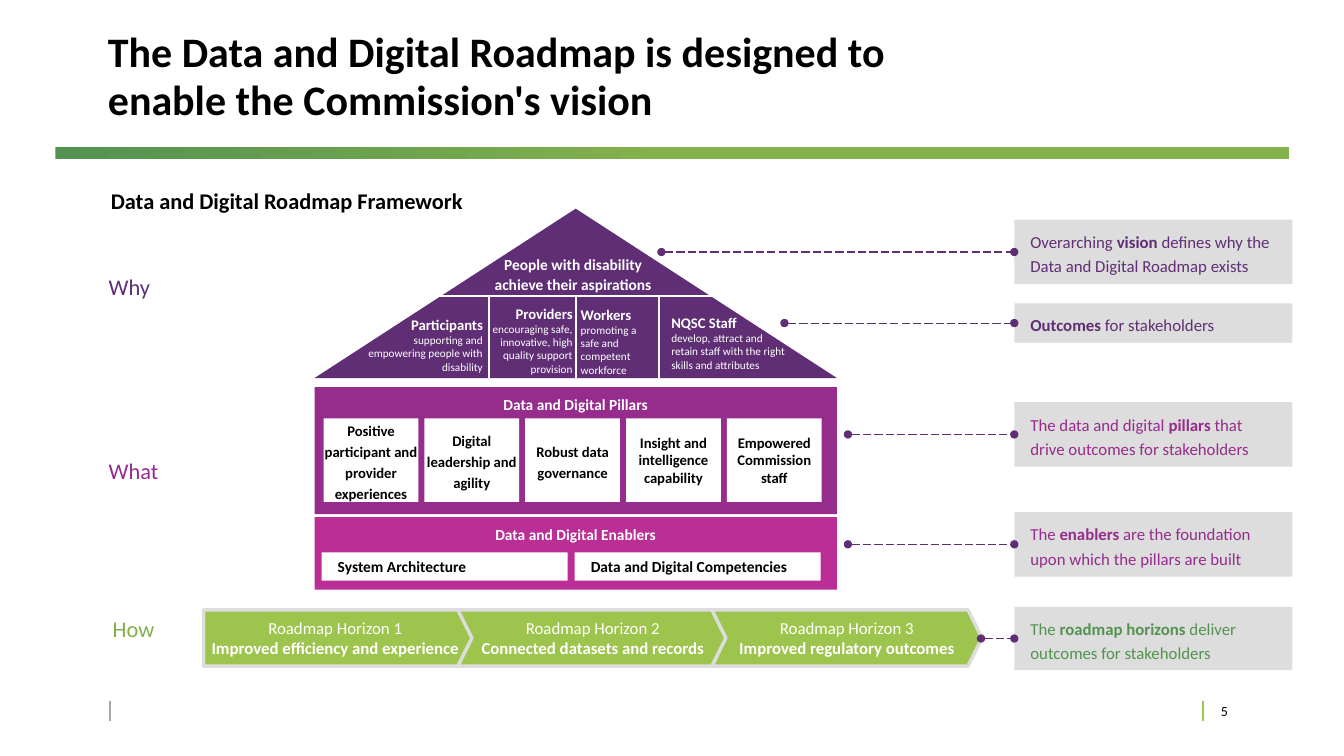
import dataclasses

import lxml.etree
import pptx
import pptx.dml.color
import pptx.enum.dml
import pptx.enum.shapes
import pptx.enum.text
import pptx.oxml.ns
import pptx.util

SHAPE = pptx.enum.shapes.MSO_SHAPE
ALIGN = pptx.enum.text.PP_ALIGN
ANCHOR = pptx.enum.text.MSO_ANCHOR


@dataclasses.dataclass(frozen=True)
class Theme:
    """Colours, type sizes and font of the slide."""
    font: str = "Calibri"
    black: str = "000000"
    white: str = "FFFFFF"
    grey: str = "DDDDDD"
    rule: str = "A6A6A6"
    purple: str = "5F2E74"
    plum: str = "962C8B"
    pink: str = "BA2E96"
    forest: str = "539250"
    leaf: str = "83B14C"
    lime: str = "9DC44D"
    title: float = 30
    head: float = 16
    note: float = 12
    label: float = 11
    item: float = 10.5
    page: float = 10
    small: float = 8


T = Theme()


def grid(count):
    """Turn a count of columns or rows, ten to the inch, into a length."""
    return pptx.util.Inches(count / 10)


def rgb(code):
    """Turn a hex code into a colour."""
    return pptx.dml.color.RGBColor.from_string(code)


def inside(box, left, top, wide, high):
    """Place a box relative to the corner of another."""
    return box[0] + left, box[1] + top, wide, high


def write(frame, text, size=T.label, color=T.black, bold=False,
          align=ALIGN.LEFT, lead=1.0):
    """Add a paragraph, with bold switched at each asterisk."""
    para = frame.paragraphs[0] if not frame.text else frame.add_paragraph()
    para.alignment, para.line_spacing = align, lead
    for turn, part in enumerate(text.split("*")):
        if part:
            run = para.add_run()
            run.text = part
            run.font.name, run.font.size = T.font, pptx.util.Pt(size)
            run.font.color.rgb = rgb(color)
            run.font.bold = bold or turn % 2 == 1


def setup(frame, pad=(1, 0.5, 1, 0.5), anchor=ANCHOR.TOP):
    """Wrap a text frame and set its margins and anchor."""
    frame.word_wrap, frame.vertical_anchor = True, anchor
    (frame.margin_left, frame.margin_top,
     frame.margin_right, frame.margin_bottom) = map(grid, pad)
    return frame


def area(slide, box, **kind):
    """Add a text box and return its frame."""
    return setup(slide.shapes.add_textbox(*map(grid, box)).text_frame, **kind)


def block(slide, box, fill, form=SHAPE.RECTANGLE, edge=None, **kind):
    """Add a filled shape and return it."""
    shape = slide.shapes.add_shape(form, *map(grid, box))
    shape.shadow.inherit = False
    shape.fill.solid()
    shape.fill.fore_color.rgb = rgb(fill)
    if edge:
        shape.line.color.rgb = rgb(edge)
        shape.line.width = pptx.util.Pt(2.5)
    else:
        shape.line.fill.background()
    setup(shape.text_frame, **kind)
    return shape


def stroke(slide, ends, color, width, dots=False):
    """Draw a straight line, dashed with round ends if asked."""
    line = slide.shapes.add_connector(
        pptx.enum.shapes.MSO_CONNECTOR.STRAIGHT, *map(grid, ends))
    line.line.color.rgb = rgb(color)
    line.line.width = pptx.util.Pt(width)
    props = line.element.spPr
    if dots:
        line.line.dash_style = pptx.enum.dml.MSO_LINE.LONG_DASH
        for end in ("a:headEnd", "a:tailEnd"):
            lxml.etree.SubElement(props.find(pptx.oxml.ns.qn("a:ln")),
                                  pptx.oxml.ns.qn(end), type="oval")
    lxml.etree.SubElement(props, pptx.oxml.ns.qn("a:effectLst"))


def header(slide, box):
    """Set the title above the gradient band."""
    title = slide.shapes.title
    title.left, title.top, title.width, title.height = map(
        grid, inside(box, 5.2, 0, 78.2, 15.1))
    frame = setup(title.text_frame, (0, 0, 0, 0), ANCHOR.MIDDLE)
    frame.auto_size = pptx.enum.text.MSO_AUTO_SIZE.NONE
    write(frame, "The Data and Digital Roadmap is designed to enable "
          "the Commission's vision", size=T.title, bold=True,
          lead=pptx.util.Pt(34))
    band = block(slide, inside(box, 0, 14.6, box[2], 1.2), T.leaf)
    band.fill.gradient()
    band.fill.gradient_angle = 0
    for stop, color, place in zip(band.fill.gradient_stops,
                                  (T.forest, T.leaf), (0, 0.5)):
        stop.color.rgb, stop.position = rgb(color), place


def footer(slide, box):
    """Draw the footer ticks and the page number."""
    left, top, wide, high = box
    for x, color in ((left, T.rule), (left + wide, T.lime)):
        stroke(slide, (x, top, x, top + high), color, 1)
    write(area(slide, inside(box, wide + 1.8, 0, 4, high), pad=(0, 0, 0, 0),
               anchor=ANCHOR.MIDDLE), "5", size=T.page)


def side(slide, box):
    """Write the heading and the three row labels."""
    write(area(slide, inside(box, 0, 0, 39.6, 4.3), pad=(1.6, 0.8, 1.6, 0.8)),
          "Data and Digital Roadmap Framework", size=T.head, bold=True)
    for text, color, x, y in (("Why", T.purple, 0.4, 8.8),
                              ("What", T.plum, 0.4, 27.1),
                              ("How", T.leaf, 0.8, 42.7)):
        write(area(slide, inside(box, x, y, 8, 3.7)), text,
              size=T.head, color=color)


def roof(slide, box):
    """Draw the triangle with the vision and the four outcomes."""
    left, top, wide, high = box
    block(slide, box, T.purple, SHAPE.ISOSCELES_TRIANGLE)
    beam = top + 8.7
    stroke(slide, (left + 10.9, beam, left + 41.5, beam), T.white, 1.5)
    for x in (17.3, 25.9, 34.2):
        stroke(slide, (left + x, beam, left + x, top + high), T.white, 1.5)
    write(area(slide, inside(box, 15.8, 3.5, 19.7, 5.8), anchor=ANCHOR.MIDDLE),
          "People with disability achieve their aspirations",
          color=T.white, bold=True, align=ALIGN.CENTER, lead=1.1)
    groups = (
        ("Participants", "supporting and empowering people with disability",
         3.5, 10.1, 13.6, 0.4, ALIGN.RIGHT),
        ("Providers", "encouraging safe, innovative, high quality support "
         "provision", 16.9, 9, 9.1, 0.4, ALIGN.RIGHT),
        ("Workers", "promoting a safe and competent workforce",
         26, 9.1, 8.4, 0.4, ALIGN.LEFT),
        ("NQSC Staff", "develop, attract and retain staff with the right "
         "skills and attributes", 34.4, 9.9, 13.8, 1, ALIGN.LEFT))
    for name, text, x, y, span, pad, align in groups:
        frame = area(slide, inside(box, x, y, span, 5.8),
                     pad=(pad, 0.5, pad, 0.5))
        write(frame, name, size=T.item, color=T.white, bold=True, align=align)
        write(frame, text, size=T.small, color=T.white, align=align)


def panel(slide, box, fill, name):
    """Draw a coloured floor of the house with its heading."""
    floor = block(slide, box, fill, pad=(0.5, 0.8, 0.5, 0.5))
    write(floor.text_frame, name, color=T.white, bold=True,
          align=ALIGN.CENTER)


def pillars(slide, box):
    """Draw the floor of five pillars."""
    panel(slide, box, T.plum, "Data and Digital Pillars")
    names = (("Positive participant and provider experiences", 1.2),
             ("Digital leadership and agility", 1.2),
             ("Robust data governance", 1.2),
             ("Insight and intelligence capability", 1),
             ("Empowered Commission staff", 1))
    for step, (name, lead) in enumerate(names):
        card = block(slide, inside(box, 0.9 + 10 * step, 3.1, 9.4, 8.3),
                     T.white, pad=(0, 0.5, 0, 0.5), anchor=ANCHOR.MIDDLE)
        write(card.text_frame, name, size=T.item, bold=True,
              align=ALIGN.CENTER, lead=lead)


def bases(slide, box):
    """Draw the floor of two enablers."""
    panel(slide, box, T.pink, "Data and Digital Enablers")
    names = "System Architecture", "Data and Digital Competencies"
    for step, name in enumerate(names):
        card = block(slide, inside(box, 0.7 + 25.1 * step, 3.5, 24.4, 2.8),
                     T.white, pad=(1.6, 0.5, 1.6, 0.5))
        write(card.text_frame, name, bold=True)


def steps(slide, box):
    """Draw the three horizons as a row of arrows."""
    names = ("Improved efficiency and experience",
             "Connected datasets and records", "Improved regulatory outcomes")
    for step, name in enumerate(names):
        arrow = block(slide, inside(box, 25.2 * step, 0, 26.8, box[3]), T.lime,
                      SHAPE.CHEVRON if step else SHAPE.PENTAGON, T.grey,
                      pad=(0.6,) * 4, anchor=ANCHOR.MIDDLE)
        arrow.adjustments[0] = 0.25
        for text in (f"Roadmap Horizon {step + 1}", f"*{name}*"):
            write(arrow.text_frame, text, size=T.note, color=T.white,
                  align=ALIGN.CENTER)


def notes(slide, box):
    """Draw the grey remarks and the dashed links to them."""
    rows = (
        ("Overarching *vision* defines why the Data and Digital Roadmap "
         "exists", T.purple, 0, 6.4, 65.6),
        ("*Outcomes* for stakeholders", T.purple, 8.3, 3.9, 77.8),
        ("The data and digital *pillars* that drive outcomes for "
         "stakeholders", T.plum, 18.1, 6.4, 84.1),
        ("The *enablers* are the foundation upon which the pillars are "
         "built", T.plum, 29, 6.4, 84.1),
        ("The *roadmap horizons* deliver outcomes for stakeholders",
         T.forest, 38.4, 6.3, 97.3))
    for text, color, y, high, start in rows:
        card = block(slide, inside(box, 0, y, box[2], high), T.grey,
                     pad=(1.6, 0.8, 1.6, 0.8), anchor=ANCHOR.MIDDLE)
        write(card.text_frame, text, size=T.note, color=color, lead=1.2)
        mid = box[1] + y + high / 2
        stroke(slide, (start, mid, box[0], mid), T.purple, 0.75, dots=True)


def main():
    """Build the slide and save it."""
    deck = pptx.Presentation()
    deck.slide_width, deck.slide_height = grid(133.3), grid(75)
    slide = deck.slides.add_slide(deck.slide_layouts[5])
    header(slide, (5.5, 0, 122.4, 15.8))
    footer(slide, (10.9, 69.5, 108.4, 2))
    side(slide, (9.4, 17.8, 39.6, 46.4))
    roof(slide, (31.2, 20.7, 51.8, 16.8))
    pillars(slide, (31.2, 38.4, 51.8, 12.6))
    bases(slide, (31.2, 51.3, 51.8, 7.2))
    steps(slide, (20.2, 60.5, 77.2, 5.6))
    notes(slide, (100.6, 21.8, 27.6, 44.7))
    deck.save("out.pptx")


if __name__ == "__main__":
    main()
